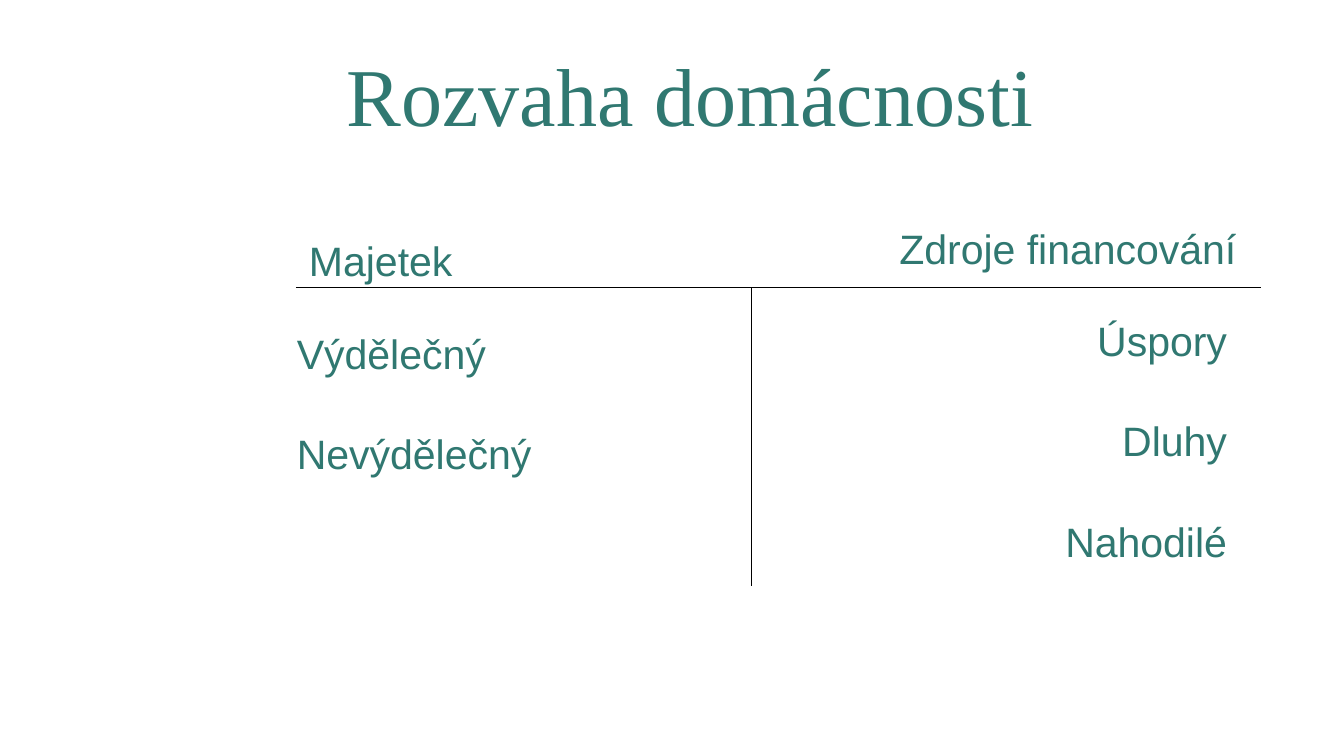
from dataclasses import dataclass

from lxml.etree import SubElement
from pptx import Presentation
from pptx.dml.color import RGBColor
from pptx.enum.shapes import MSO_CONNECTOR as Connector
from pptx.enum.text import MSO_ANCHOR as Anchor, MSO_AUTO_SIZE as AutoSize, PP_ALIGN as Align
from pptx.oxml.ns import qn
from pptx.util import Cm, Pt


@dataclass(frozen=True)
class Theme:
    text: RGBColor = RGBColor(0x30, 0x78, 0x71)
    line: RGBColor = RGBColor(0, 0, 0)
    background: RGBColor = RGBColor(0xFF, 0xFF, 0xFF)
    title_font: str = "Times New Roman"
    body_font: str = "Arial"
    title_size: Pt = Pt(44)
    body_size: Pt = Pt(22)
    item_gap: Pt = Pt(27.4)
    line_width: Pt = Pt(0.75)
    top_inset: Cm = Cm(0.22)


class BalanceSlide:
    """Draws the parts of a balance sheet slide in one theme."""

    def __init__(self, prs, theme):
        self.theme = theme
        self.s = prs.slides.add_slide(prs.slide_layouts[5])
        fill = self.s.background.fill
        fill.solid()
        fill.fore_color.rgb = theme.background

    def format_runs(self, p, font, size):
        for r in p.runs:
            r.font.name = font
            r.font.size = size
            r.font.color.rgb = self.theme.text

    def title(self, text, left, top, width, height):
        sp = self.s.shapes.title
        sp.left, sp.top, sp.width, sp.height = map(Cm, (left, top, width, height))
        tf = sp.text_frame
        tf.text = text
        tf.auto_size = AutoSize.NONE
        tf.vertical_anchor = Anchor.MIDDLE
        p = tf.paragraphs[0]
        p.alignment = Align.LEFT
        self.format_runs(p, self.theme.title_font, self.theme.title_size)

    def items(self, texts, align, left, top, width, height):
        sp = self.s.shapes.add_textbox(*map(Cm, (left, top, width, height)))
        tf = sp.text_frame
        tf.word_wrap = True
        tf.margin_top = self.theme.top_inset
        tf.text = "\n".join(texts)
        for i, p in enumerate(tf.paragraphs):
            p.alignment = align
            if i:
                p.space_before = self.theme.item_gap
            self.format_runs(p, self.theme.body_font, self.theme.body_size)

    def line(self, x1, y1, x2, y2):
        sp = self.s.shapes.add_connector(Connector.STRAIGHT, *map(Cm, (x1, y1, x2, y2)))
        sp.line.color.rgb = self.theme.line
        sp.line.width = self.theme.line_width
        SubElement(sp._element.spPr, qn("a:effectLst"))


def main():
    prs = Presentation()
    prs.slide_width, prs.slide_height = Cm(25.4), Cm(14.29)
    slide = BalanceSlide(prs, Theme())
    rule_y, divider_x = 5.44, 14.2

    slide.title("Rozvaha domácnosti", 6.3, 0.58, 17.83, 2.39)
    slide.line(5.59, rule_y, 23.83, rule_y)
    slide.line(divider_x, rule_y, divider_x, 11.07)
    slide.items(["Zdroje financování"], Align.RIGHT, divider_x, 4.01, 9.42, 1.22)
    slide.items(["Majetek"], Align.JUSTIFY, 5.59, 4.24, 3.81, 1.19)
    slide.items(["Výdělečný", "Nevýdělečný"], Align.JUSTIFY, 5.36, 5.99, 8.15, 4.01)
    slide.items(["Úspory", "Dluhy", "Nahodilé"], Align.RIGHT, 15.29, 5.74, 8.15, 4.9)

    prs.save("out.pptx")


if __name__ == "__main__":
    main()
